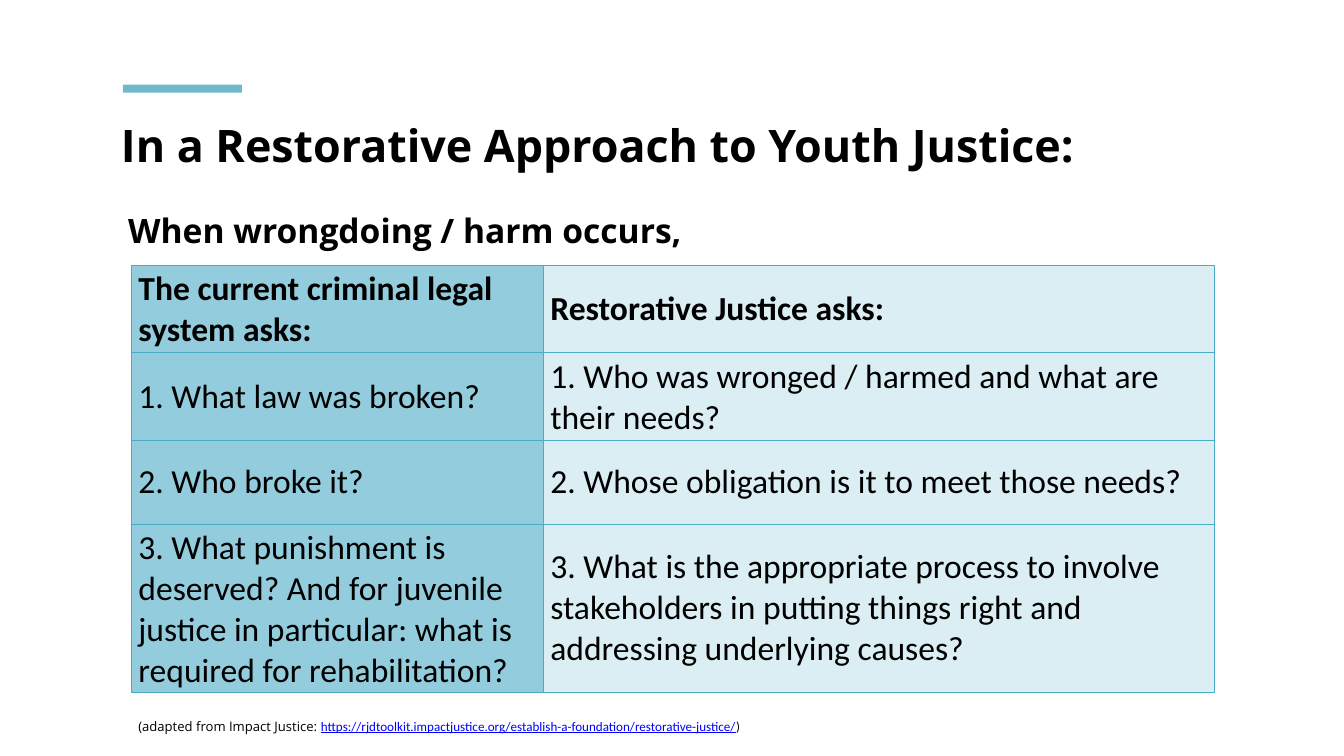
from lxml import etree
from pptx import Presentation
from pptx.dml.color import RGBColor
from pptx.enum.shapes import MSO_SHAPE
from pptx.enum.text import MSO_ANCHOR
from pptx.oxml.ns import qn
from pptx.util import Inches, Pt

BLACK = RGBColor(0, 0, 0)
LINK_BLUE = RGBColor(0, 0, 0xFF)
ACCENT = RGBColor(0x70, 0xB9, 0xCC)
BORDER = RGBColor(0x4B, 0xAC, 0xC6)
COLUMN_FILLS = [RGBColor(0x93, 0xCD, 0xDD), RGBColor(0xDB, 0xEE, 0xF4)]

HEADING_FONT = "Open Sans"
BODY_FONT = "Calibri"

COLUMN_WIDTHS = [6.13, 9.98]
ROW_HEIGHTS = [1.25, 1.25, 1.25, 1.55]
QUESTIONS = [
    ("The current criminal legal system asks:", "Restorative Justice asks:"),
    ("1. What law was broken?",
     "1. Who was wronged / harmed and what are their needs?"),
    ("2. Who broke it?", "2. Whose obligation is it to meet those needs?"),
    ("3. What punishment is deserved? And for juvenile justice in particular: "
     "what is required for rehabilitation?",
     "3. What is the appropriate process to involve stakeholders in putting "
     "things right and addressing underlying causes?"),
]


def add_run(p, text, size=36, font=BODY_FONT, color=BLACK, bold=False,
            underline=False):
    r = p.add_run()
    r.text = text
    r.font.size = Pt(size)
    r.font.name = font
    r.font.color.rgb = color
    r.font.bold = bold
    r.font.underline = underline


def add_text_box(s, left, top, width, height, inset_x=0.1, inset_y=0):
    """Add a wrapping text box and return its first paragraph."""
    tf = s.shapes.add_textbox(Inches(left), Inches(top),
                              Inches(width), Inches(height)).text_frame
    tf.word_wrap = True
    tf.margin_left = tf.margin_right = Inches(inset_x)
    tf.margin_top = tf.margin_bottom = Inches(inset_y)
    return tf.paragraphs[0]


def add_accent_bar(s, left, top, width, height):
    sp = s.shapes.add_shape(MSO_SHAPE.RECTANGLE, Inches(left), Inches(top),
                            Inches(width), Inches(height))
    sp.shadow.inherit = False
    sp.fill.solid()
    sp.fill.fore_color.rgb = ACCENT
    sp.line.fill.background()


def set_borders(cell):
    tc_pr = cell._tc.get_or_add_tcPr()
    for i, side in enumerate(("lnL", "lnR", "lnT", "lnB")):
        ln = etree.Element(qn(f"a:{side}"), w=str(Pt(1)))
        fill = etree.SubElement(ln, qn("a:solidFill"))
        etree.SubElement(fill, qn("a:srgbClr"), val=str(BORDER))
        tc_pr.insert(i, ln)


def add_question_table(s, left, top):
    table = s.shapes.add_table(
        len(ROW_HEIGHTS), len(COLUMN_WIDTHS), Inches(left), Inches(top),
        Inches(sum(COLUMN_WIDTHS)), Inches(sum(ROW_HEIGHTS))).table
    table.horz_banding = False
    for column, width in zip(table.columns, COLUMN_WIDTHS):
        column.width = Inches(width)
    for i, (row, height) in enumerate(zip(table.rows, ROW_HEIGHTS)):
        row.height = Inches(height)
        for cell, text, color in zip(row.cells, QUESTIONS[i], COLUMN_FILLS):
            cell.fill.solid()
            cell.fill.fore_color.rgb = color
            cell.vertical_anchor = MSO_ANCHOR.MIDDLE
            set_borders(cell)
            add_run(cell.text_frame.paragraphs[0], text, bold=i == 0)


def main():
    prs = Presentation()
    prs.slide_width, prs.slide_height = Inches(20), Inches(11.25)
    s = prs.slides.add_slide(prs.slide_layouts[6])

    # Accent bar and headings
    add_accent_bar(s, 1.83, 1.26, 1.77, 0.12)
    p = add_text_box(s, 1.81, 3.12, 10.07, 1)
    add_run(p, "When wrongdoing / harm occurs,", font=HEADING_FONT, bold=True)
    p = add_text_box(s, 1.75, 1.75, 15.98, 1, inset_x=0.05)
    add_run(p, "In a Restorative Approach to Youth Justice:", size=48,
            font=HEADING_FONT, bold=True)

    # Comparison of the two approaches
    add_question_table(s, 1.96, 3.95)

    # Source line
    p = add_text_box(s, 1.96, 10.64, 9.34, 0.57, inset_y=0.05)
    add_run(p, "(adapted from Impact Justice: ", size=14, font=HEADING_FONT)
    add_run(p, "https://rjdtoolkit.impactjustice.org/establish-a-foundation/"
            "restorative-justice/", size=14, color=LINK_BLUE, underline=True)
    add_run(p, ")", size=14)

    prs.save("out.pptx")


if __name__ == "__main__":
    main()
